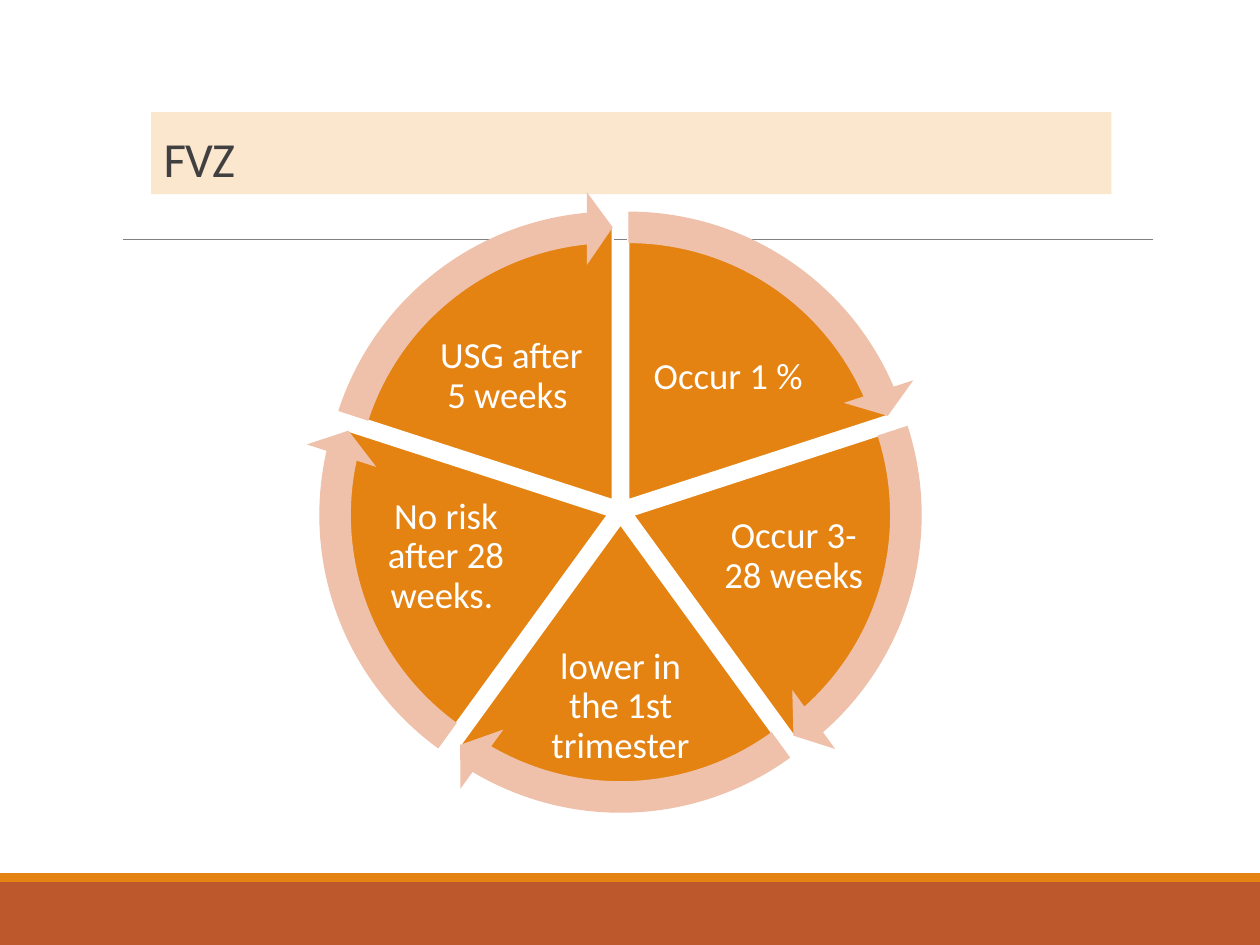
import math
from dataclasses import dataclass

from lxml import etree
from pptx import Presentation
from pptx import util as u
from pptx.dml.color import RGBColor
from pptx.enum import shapes, text
from pptx.oxml.ns import qn


@dataclass(frozen=True)
class Theme:
    font: str = "Calibri"
    title_size: float = 28
    label_size: float = 21
    white: str = "FFFFFF"
    dark: str = "404040"
    rule: str = "808080"
    orange: str = "E48312"
    rust: str = "BD582C"
    cream: str = "FBE6CE"
    arrow: str = "EFC1AB"


T = Theme()

# Wheel geometry: angles use the adjustment scale, where a full turn is 216
CENTRE = (4.925, 4.055)
SPREAD = 0.105
PIE, RING = 4.37, 4.91
TURN, TOP, HEAD = 216, 162, 3.275

# Label text with its box, clockwise from the top
LABELS = [
    ("Occur 1 %", (5.08, 2.53, 1.4, 0.93)),
    ("Occur 3- 28 weeks", (5.65, 3.9, 1.3, 1.04)),
    ("lower in the 1st trimester", (4.3, 5.04, 1.25, 1.14)),
    ("No risk after 28 weeks. ", (2.89, 3.9, 1.3, 1.04)),
    ("USG after 5 weeks ", (3.36, 2.52, 1.4, 0.94)),
]
STEP = TURN / len(LABELS)


def rgb(value):
    return RGBColor.from_string(value)


def add_filled(s, kind, box, fill, outline=None, adjustments=()):
    sp = s.shapes.add_shape(kind, *map(u.Inches, box))
    sp.shadow.inherit = False
    sp.fill.solid()
    sp.fill.fore_color.rgb = rgb(fill)
    if outline:
        sp.line.color.rgb = rgb(outline)
        sp.line.width = u.Pt(1.25)
    else:
        sp.line.fill.background()
    for i, value in enumerate(adjustments):
        sp.adjustments[i] = value
    return sp


def add_rule(s, x1, x2, y):
    line = s.shapes.add_connector(
        shapes.MSO_CONNECTOR.STRAIGHT, *map(u.Inches, (x1, y, x2, y)))
    line.line.color.rgb = rgb(T.rule)
    line.line.width = u.Pt(0.5)
    etree.SubElement(line._element.spPr, qn("a:effectLst"))


def write(sp, words, size, color, align, anchor, spacing):
    tf = sp.text_frame
    tf.word_wrap = True
    tf.vertical_anchor = anchor
    p = tf.paragraphs[0]
    p.text = words
    p.alignment = align
    p.line_spacing = spacing
    r = p.runs[0]
    r.font.name = T.font
    r.font.size = u.Pt(size)
    r.font.color.rgb = rgb(color)
    return r


def add_title(s, words):
    sp = add_filled(s, shapes.MSO_SHAPE.RECTANGLE, (1.2, 0.89, 7.62, 0.65), T.cream)
    r = write(sp, words, T.title_size, T.dark, text.PP_ALIGN.LEFT,
              text.MSO_ANCHOR.BOTTOM, 0.85)
    r.font._element.set("spc", "-50")


def add_label(s, words, box):
    sp = s.shapes.add_textbox(*map(u.Inches, box))
    tf = sp.text_frame
    tf.margin_left = tf.margin_right = u.Inches(0.03)
    tf.margin_top = tf.margin_bottom = u.Inches(0.03)
    write(sp, words, T.label_size, T.white, text.PP_ALIGN.CENTER,
          text.MSO_ANCHOR.MIDDLE, 0.9)


def sector(i, size):
    """Square box of a sector moved outwards, with its start and end angles."""
    start = TOP + i * STEP
    middle = math.tau * (start + STEP / 2) / TURN
    left = CENTRE[0] + SPREAD * math.cos(middle) - size / 2
    top = CENTRE[1] + SPREAD * math.sin(middle) - size / 2
    return (left, top, size, size), start % TURN, (start + STEP) % TURN


def add_wheel(s):
    # Slices with their labels
    for i, (words, label_box) in enumerate(LABELS):
        box, start, end = sector(i, PIE)
        add_filled(s, shapes.MSO_SHAPE.PIE, box, T.orange, T.white, (start, end))
        add_label(s, words, label_box)
    # Arrows around the rim
    for i in range(len(LABELS)):
        box, start, end = sector(i, RING)
        add_filled(s, shapes.MSO_SHAPE.CIRCULAR_ARROW, box, T.arrow,
                   adjustments=(0.051, HEAD, end - HEAD, start, 0.059))


def main():
    prs = Presentation()
    prs.slide_width, prs.slide_height = u.Inches(10), u.Inches(7.5)
    s = prs.slides.add_slide(prs.slide_layouts[6])

    # Footer bands and header rule
    add_filled(s, shapes.MSO_SHAPE.RECTANGLE, (0, 7, 10, 0.5), T.rust)
    add_filled(s, shapes.MSO_SHAPE.RECTANGLE, (0, 6.93, 10, 0.07), T.orange)
    add_rule(s, 0.98, 9.15, 1.9)

    # Content
    add_title(s, "FVZ")
    add_wheel(s)
    prs.save("out.pptx")


if __name__ == "__main__":
    main()
